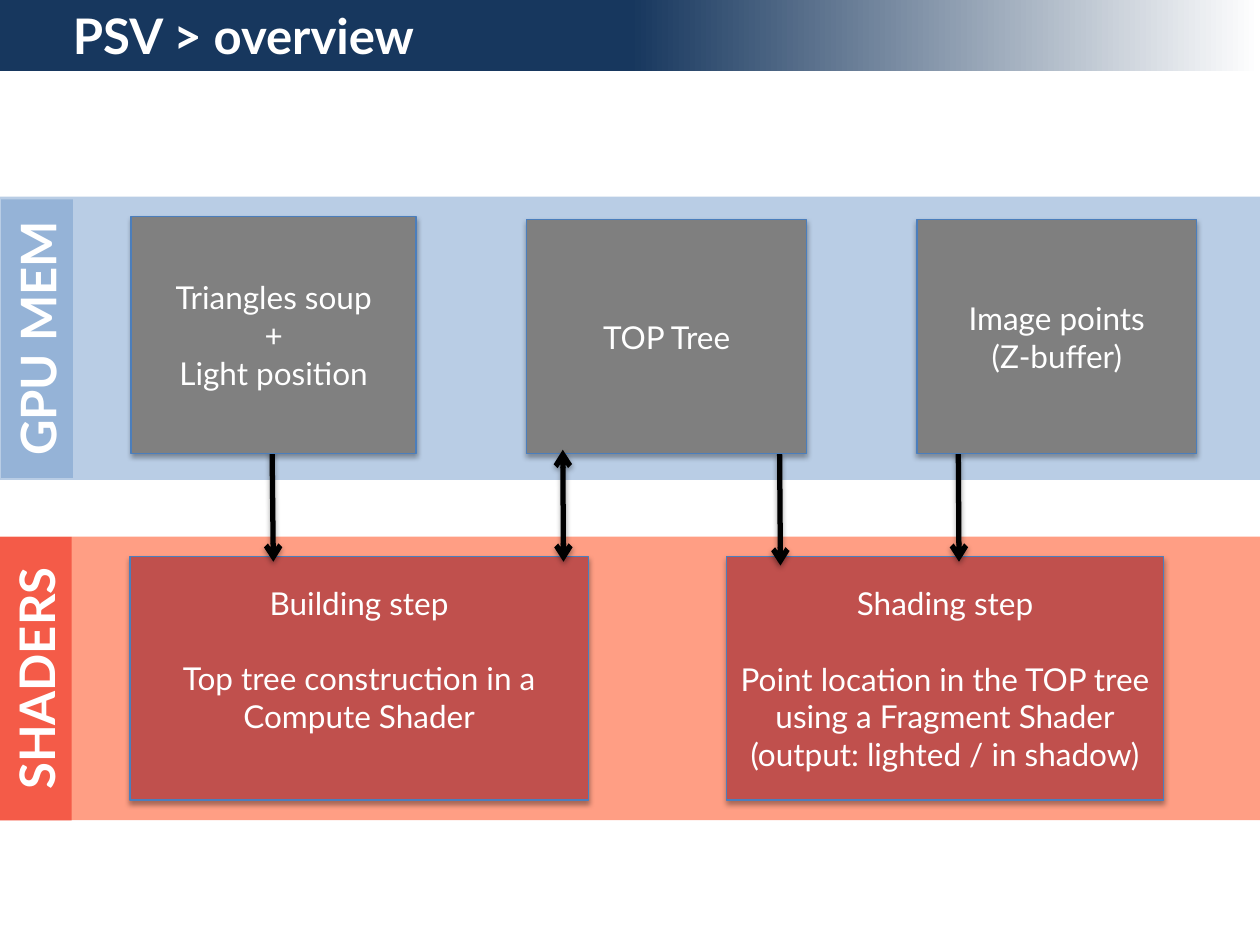
from lxml import etree
from pptx import Presentation
from pptx import util as u
from pptx.dml import color as col
from pptx.enum import shapes, text
from pptx.oxml import ns

Pt = u.Pt
MID, TOP = text.MSO_ANCHOR.MIDDLE, text.MSO_ANCHOR.TOP
CENTER, LEFT = text.PP_ALIGN.CENTER, text.PP_ALIGN.LEFT
LINE = 21.6  # height of one line of 18 pt text


def rgb(code):
    return col.RGBColor.from_string(code)


def put(obj, vals):
    for key, val in vals.items():
        setattr(obj, key, val)


def sub(node, tag, **attrs):
    return etree.SubElement(node, ns.qn(tag), attrs)


class Deck:
    font = {"name": "Lato", "size": Pt(18), "bold": False}
    head = {"name": "Lato", "size": Pt(28), "bold": True}

    def __init__(self, wide, high):
        self.prs = Presentation()
        put(self.prs, {"slide_width": Pt(wide), "slide_height": Pt(high)})
        self.slide = self.prs.slides.add_slide(self.prs.slide_layouts[6])

    def rect(self, x, y, w, h, fill=None):
        box = self.slide.shapes.add_shape(
            shapes.MSO_SHAPE.RECTANGLE, Pt(x), Pt(y), Pt(w), Pt(h))
        box.shadow.inherit = False
        box.line.fill.background()
        if fill:
            box.fill.solid()
            box.fill.fore_color.rgb = rgb(fill)
        return box

    def shade(self, effects, blur, dist, alpha):
        shadow = sub(effects, "a:outerShdw", blurRad=str(Pt(blur)),
                     dist=str(Pt(dist)), dir="5400000", rotWithShape="0")
        tint = sub(shadow, "a:srgbClr", val="000000")
        sub(tint, "a:alpha", val=str(alpha * 1000))

    def words(self, box, lines, font, align=CENTER, anchor=MID,
              left=7.2, low=3.6, gap=0):
        frame = box.text_frame
        put(frame, {"word_wrap": True, "vertical_anchor": anchor,
                    "margin_left": Pt(left), "margin_right": Pt(7.2),
                    "margin_top": Pt(3.6), "margin_bottom": Pt(low)})
        for i, line in enumerate(lines):
            para = frame.paragraphs[0] if i == 0 else frame.add_paragraph()
            para.alignment = align
            if i == 1 and gap:
                para.space_before = Pt(gap)
            run = para.add_run()
            run.text = line
            put(run.font, font)
            run.font.color.rgb = rgb("FFFFFF")

    def label(self, mid_x, mid_y, w, h, fill, line):
        box = self.rect(mid_x - w / 2, mid_y - h / 2, w, h, fill)
        box.rotation = 270
        self.words(box, [line], self.head, anchor=TOP)

    def card(self, x, y, w, h, fill, lines, **style):
        box = self.rect(x, y, w, h, fill)
        box.line.color.rgb = rgb("4B7EBC")
        box.line.width = Pt(0.75)
        self.shade(box._element.spPr.find(ns.qn("a:effectLst")), 3.1, 1.8, 35)
        self.words(box, lines, self.font, **style)

    def arrow(self, x, y, end, both=False):
        link = self.slide.shapes.add_connector(
            shapes.MSO_CONNECTOR.STRAIGHT, Pt(x), Pt(y), Pt(end), Pt(y + 64))
        link.line.color.rgb = rgb("000000")
        link.line.width = Pt(3)
        props = link._element.spPr
        line = props.find(ns.qn("a:ln"))
        if both:
            sub(line, "a:headEnd", type="arrow")
        sub(line, "a:tailEnd", type="arrow")
        self.shade(sub(props, "a:effectLst"), 3.1, 1.6, 38)

    def title(self, line, high):
        bar = self.rect(0, -0.5, 720, high)
        bar.fill.gradient()
        bar.fill.gradient_angle = 0
        stops = zip(bar.fill.gradient_stops, (0.5, 1), ("17375E", "FFFFFF"))
        for stop, place, code in stops:
            stop.position = place
            stop.color.rgb = rgb(code)
        self.words(bar, [line], self.head, align=LEFT, left=41.7)


def main():
    deck = Deck(720, 540)

    # Bands and their side labels
    for y, fill in ((112.3, "B9CDE5"), (306.7, "FF9E84")):
        deck.rect(0, y, 720, 162, fill)
    deck.label(21.2, 193.5, 159.1, 41, "95B3D7", "GPU MEM")
    deck.label(20.5, 387.8, 162, 41, "F45B48", "SHADERS")

    # Shader steps
    red, grey = "C0504D", "7F7F7F"
    deck.card(74.2, 318.2, 262, 139, red,
              ["Building step", "Top tree construction in a Compute Shader"],
              gap=LINE, low=3.6 + LINE)
    deck.card(415.2, 318.2, 249.8, 139, red,
              ["Shading step",
               "Point location in the TOP tree using a Fragment Shader",
               "(output: lighted / in shadow)"], gap=LINE)

    # Memory blocks, with arrows to the steps
    deck.arrow(155.5, 257, 156.2)
    deck.arrow(445.5, 259.2, 446)
    deck.card(301, 125.3, 159.8, 134, grey, ["TOP Tree"])
    deck.arrow(321.6, 257, 322, both=True)
    deck.card(74.9, 123.8, 162.9, 135.4, "808080",
              ["Triangles soup", "+", "Light position"])
    deck.arrow(547.6, 257, 548)
    deck.card(524, 125.3, 159.8, 134, grey, ["Image points", "(Z-buffer)"])

    # Title bar
    deck.title("PSV > overview", 41)

    deck.prs.save("out.pptx")


if __name__ == "__main__":
    main()
